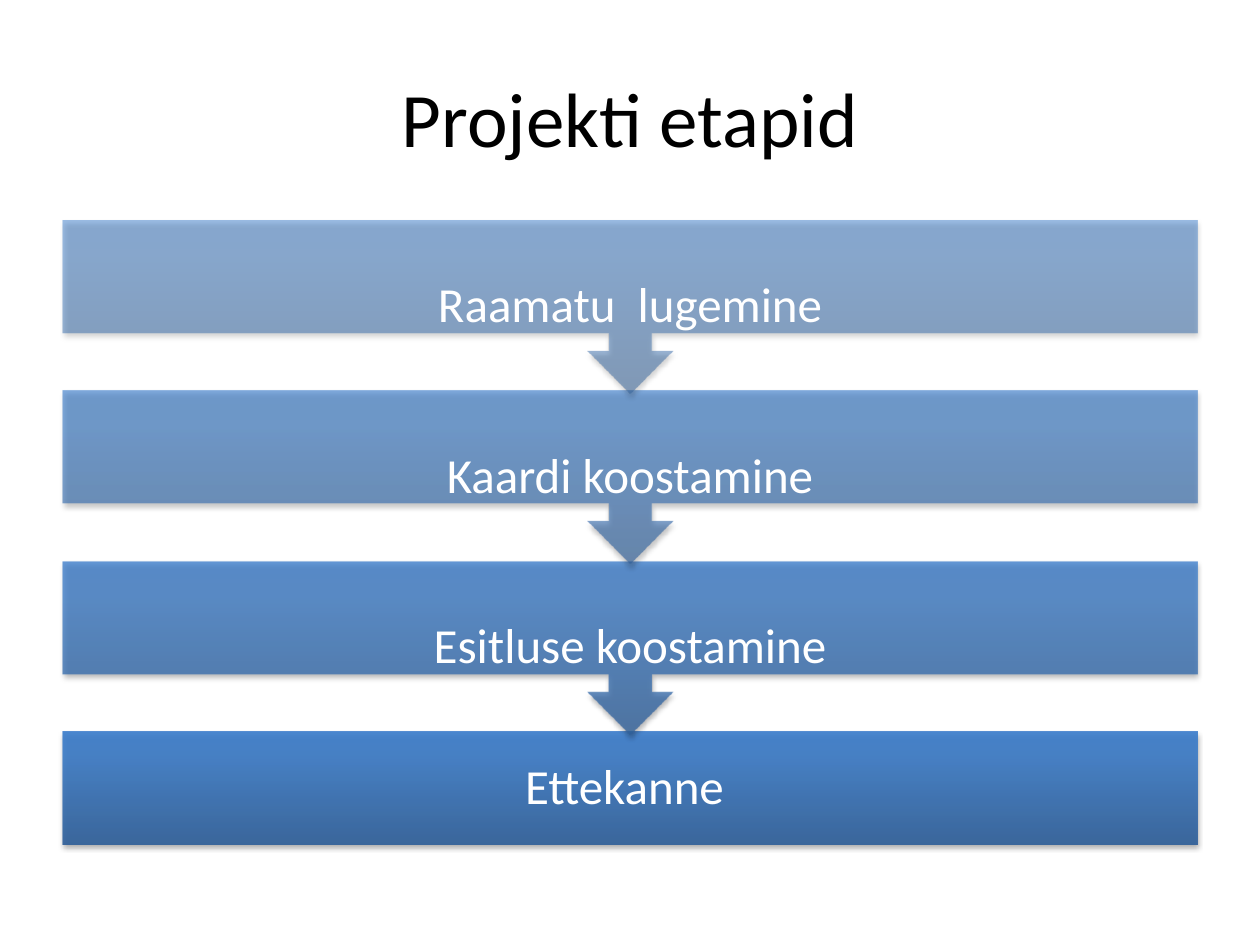
from lxml import etree
from pptx import Presentation
from pptx.dml.color import RGBColor
from pptx.enum.shapes import MSO_SHAPE
from pptx.enum.text import MSO_ANCHOR, PP_ALIGN
from pptx.oxml.ns import nsdecls, qn
from pptx.util import Inches, Pt

RECT, ARROW = MSO_SHAPE.RECTANGLE, MSO_SHAPE.UP_ARROW_CALLOUT
MIDDLE, CENTER = MSO_ANCHOR.MIDDLE, PP_ALIGN.CENTER

# Content: each stage with its opacity in percent
TITLE = "Projekti etapid"
STAGES = [
    ("Raamatu  lugemine", 50),
    ("Kaardi koostamine", 63),
    ("Esitluse koostamine", 77),
    ("Ettekanne ", 90),
]
STOPS = [(0, "2F5F99"), (80, "3D7CC7"), (100, "3A7CCB")]

# Layout in inches
LEFT, WIDTH = 0.5, 9
FIRST, LAST = 1.75, 5.81
STEP = (LAST - FIRST) / (len(STAGES) - 1)
TALL, SHORT = 1.37, 0.89


def color(code):
    return RGBColor.from_string(code)


def add_text(shapes, text, top, height, size, code, inset=(0.1, 0.05)):
    box = shapes.add_textbox(Inches(LEFT), Inches(top), Inches(WIDTH), Inches(height))
    frame = box.text_frame
    frame.word_wrap = True
    frame.vertical_anchor = MIDDLE
    frame.margin_left = frame.margin_right = Inches(inset[0])
    frame.margin_top = frame.margin_bottom = Inches(inset[1])
    frame.text = text
    para = frame.paragraphs[0]
    para.alignment = CENTER
    font = para.runs[0].font
    font.name, font.size = "Calibri", Pt(size)
    font.color.rgb = color(code)
    return para


def add_fill(shape, alpha):
    # The light end stays on top even when the shape is turned
    stops = "".join(
        f'<a:gs pos="{pos * 1000}"><a:srgbClr val="{code}">'
        f'<a:alpha val="{alpha * 1000}"/></a:srgbClr></a:gs>'
        for pos, code in STOPS
    )
    grad = etree.fromstring(
        f'<a:gradFill {nsdecls("a")} rotWithShape="0"><a:gsLst>{stops}</a:gsLst>'
        '<a:lin ang="16200000" scaled="0"/></a:gradFill>'
    )
    shape.element.spPr.find(qn("a:prstGeom")).addnext(grad)


def add_shadow(shape):
    shape.shadow.inherit = False
    shade = etree.fromstring(
        f'<a:outerShdw {nsdecls("a")} blurRad="{Pt(3.1)}" dist="{Pt(1.8)}" '
        'dir="5400000" rotWithShape="0"><a:srgbClr val="000000">'
        '<a:alpha val="35000"/></a:srgbClr></a:outerShdw>'
    )
    shape.element.spPr.find(qn("a:effectLst")).append(shade)


def add_stage(shapes, num):
    text, alpha = STAGES[num]
    final = num == len(STAGES) - 1
    top = FIRST + num * STEP
    height = SHORT if final else TALL
    shape = shapes.add_shape(
        RECT if final else ARROW,
        Inches(LEFT), Inches(top), Inches(WIDTH), Inches(height),
    )
    shape.rotation = 0 if final else 180
    shape.line.fill.background()
    add_fill(shape, alpha)
    add_shadow(shape)
    para = add_text(shapes, text, top, height, 28, "FFFFFF", (0.22, 0.22))
    para.line_spacing = 0.9


def main():
    deck = Presentation()
    deck.slide_width, deck.slide_height = Inches(10), Inches(7.5)
    slide = deck.slides.add_slide(deck.slide_layouts[6])
    add_text(slide.shapes, TITLE, 0.3, 1.25, 44, "000000")

    # Last stage first, so each arrow tip lies over the next bar
    group = slide.shapes.add_group_shape()
    for num in reversed(range(len(STAGES))):
        add_stage(group.shapes, num)
    deck.save("out.pptx")


if __name__ == "__main__":
    main()
